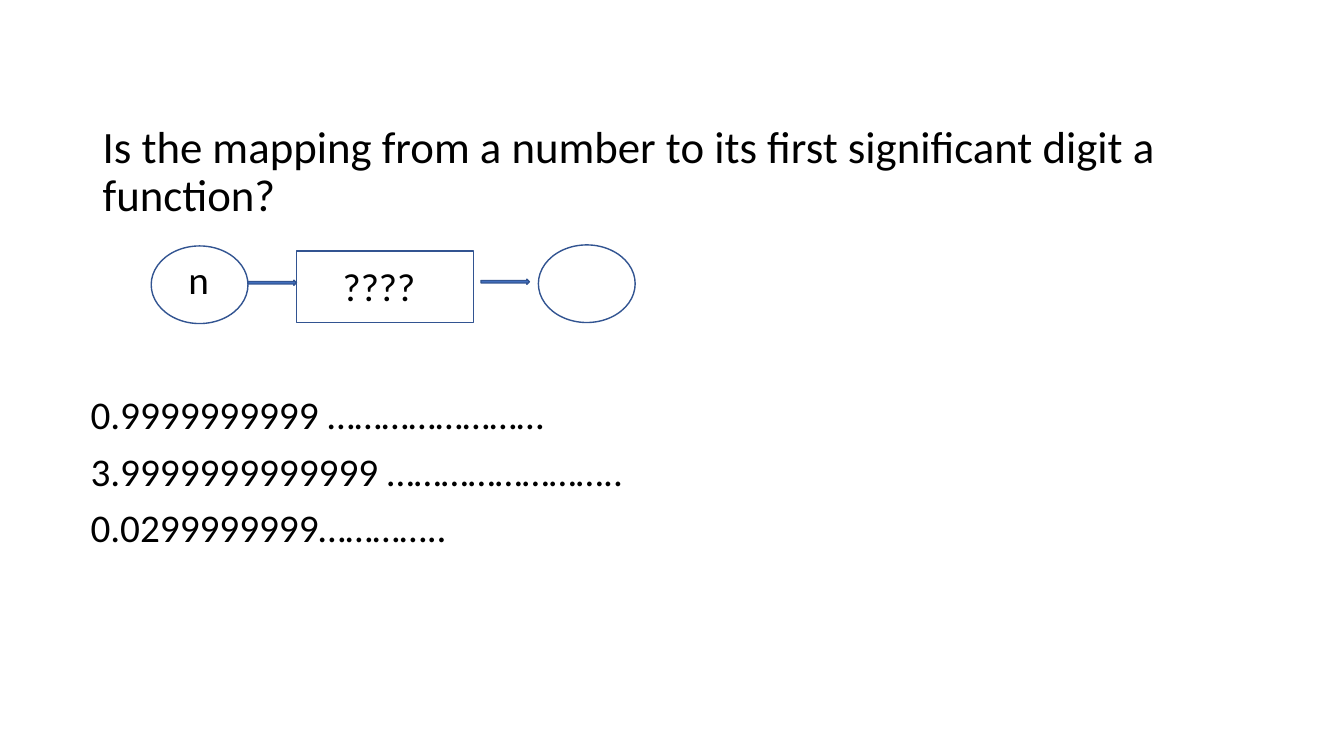
import pptx
import pptx.util
import pptx.dml.color
import pptx.enum.shapes
import pptx.enum.text

Inches = pptx.util.Inches
Pt = pptx.util.Pt
Shape = pptx.enum.shapes.MSO_SHAPE
Anchor = pptx.enum.text.MSO_ANCHOR

BLACK = pptx.dml.color.RGBColor(0x00, 0x00, 0x00)
OUTLINE = pptx.dml.color.RGBColor(0x32, 0x54, 0x91)
ARROW_FILL = pptx.dml.color.RGBColor(0x44, 0x72, 0xC4)


def write(frame, text, size=28, color=BLACK, font="Calibri", line_spacing=1.0, space_before=0):
    frame.text = text
    for paragraph in frame.paragraphs:
        paragraph.line_spacing = line_spacing
        paragraph.space_before = Pt(space_before)
        paragraph.font.size = Pt(size)
        paragraph.font.name = font
        paragraph.font.color.rgb = color


class MappingSlide:
    line_width = Pt(1)

    def __init__(self, slide):
        self.shapes = slide.shapes

    def text(self, words, left, top, width, height, anchor=Anchor.TOP, wrap=True, **style):
        box = self.shapes.add_textbox(Inches(left), Inches(top), Inches(width), Inches(height))
        box.text_frame.word_wrap = wrap
        box.text_frame.vertical_anchor = anchor
        write(box.text_frame, words, **style)

    def outline(self, kind, left, top, width, height, fill=None):
        shape = self.shapes.add_shape(kind, Inches(left), Inches(top), Inches(width), Inches(height))
        shape.shadow.inherit = False
        shape.line.color.rgb = OUTLINE
        shape.line.width = self.line_width
        if fill is None:
            shape.fill.background()
        else:
            shape.fill.solid()
            shape.fill.fore_color.rgb = fill

    def oval(self, left, top):
        self.outline(Shape.OVAL, left, top, 0.96, 0.77)

    def arrow(self, left, top):
        self.outline(Shape.RIGHT_ARROW, left, top, 0.48, 0.05, fill=ARROW_FILL)


def main():
    deck = pptx.Presentation()
    deck.slide_width = Inches(13.33)
    deck.slide_height = Inches(7.5)
    mapping = MappingSlide(deck.slides.add_slide(deck.slide_layouts[6]))

    mapping.text("Is the mapping from a number to its first significant digit a function?",
                 0.92, 0.99, 11.5, 1.45, anchor=Anchor.MIDDLE, size=32, line_spacing=0.9)

    examples = ["0.9999999999 ……………………", "3.9999999999999 ……………………..", "0.0299999999………….."]
    mapping.text("\n".join(examples), 0.8, 3.88, 11.5, 3.26, line_spacing=0.9, space_before=10)

    mapping.oval(1.5, 2.44)
    mapping.oval(5.34, 2.43)
    mapping.outline(Shape.RECTANGLE, 2.94, 2.49, 1.76, 0.71)
    mapping.arrow(2.46, 2.78)
    mapping.arrow(4.77, 2.77)
    mapping.text("????", 3.3, 2.55, 1.19, 0.57)
    mapping.text("n", 1.77, 2.48, 0.38, 0.57, wrap=False)

    deck.save("out.pptx")


if __name__ == "__main__":
    main()
